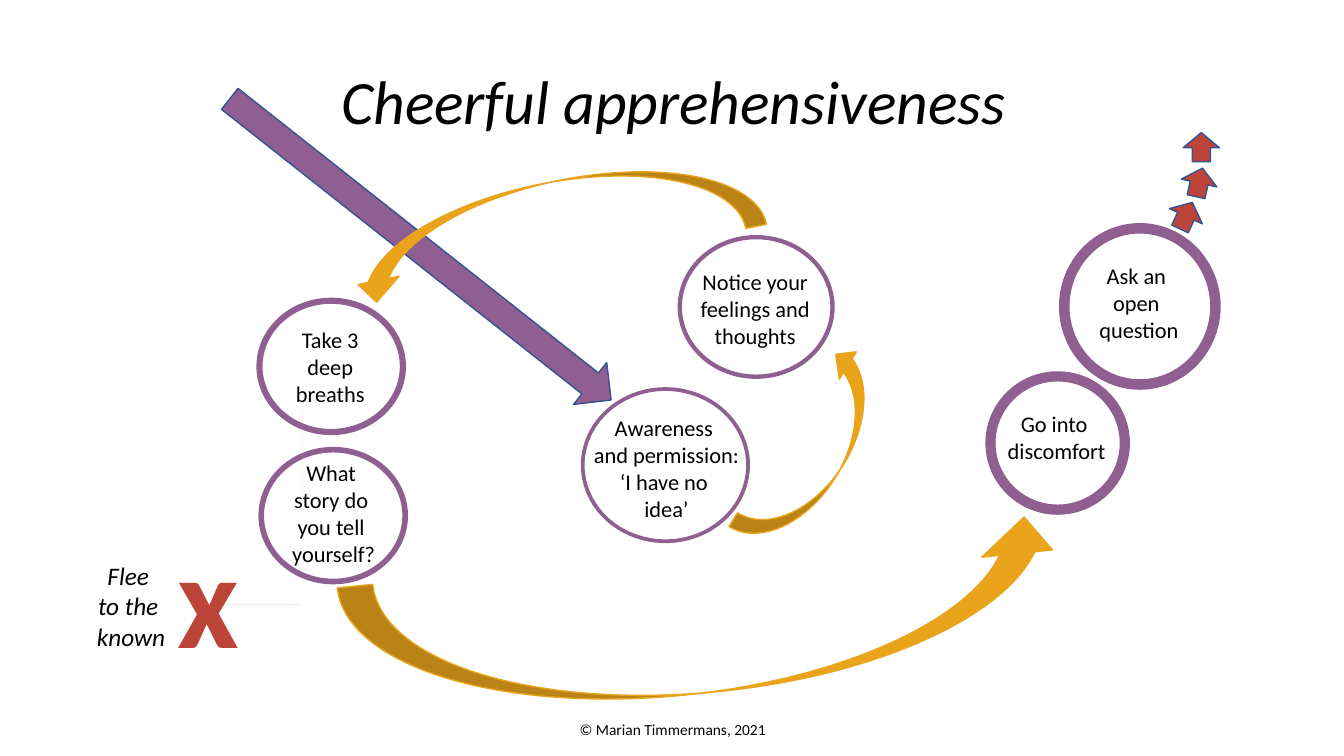
from dataclasses import dataclass

from pptx import Presentation
from pptx.dml.color import RGBColor
from pptx.enum.shapes import MSO_SHAPE as Preset
from pptx.enum.text import MSO_ANCHOR as Anchor, MSO_AUTO_SIZE as AutoSize, PP_ALIGN as Align
from pptx.util import Inches, Pt


@dataclass(frozen=True)
class Theme:
    font: str = "Calibri"
    ink: str = "000000"
    purple: str = "905F92"
    gold: str = "E9A41B"
    red: str = "BC4438"
    outline: str = "325491"
    title: int = 44
    label: int = 16
    aside: int = 18
    cross: int = 96
    credit: int = 11


THEME = Theme()

# centre of attention, ring box, ring thickness, line width, label box, label lines
STEPS = [
    ((5.77, 3.85, 1.66, 1.53), 0.013, 1.25, (5.78, 4.06, 1.66, 1.18),
     ["Awareness ", "and permission: ", "‘I have no \videa’"]),
    ((6.73, 2.34, 1.54, 1.41), 0.018, 1.25, (6.84, 2.61, 1.3, 0.91),
     ["Notice your feelings and thoughts"]),
    ((2.55, 2.96, 1.47, 1.35), 0.035, 1, (2.68, 3.19, 1.19, 0.91),
     ["Take 3 deep breaths"]),
    ((2.57, 4.44, 1.47, 1.35), 0.031, 1, (2.61, 4.51, 1.4, 1.18),
     ["What ", "story do ", "you tell ", "yourself?"]),
    ((9.78, 3.69, 1.42, 1.41), 0.062, 1, (9.8, 4.02, 1.36, 0.64),
     ["Go into ", "discomfort"]),
    ((10.51, 2.22, 1.59, 1.64), 0.057, 1, (10.62, 2.55, 1.35, 0.91),
     ["Ask an ", "open ", "question"]),
]
SWEEPS = [
    ((6.99, 4.15, 2.17, 0.64), 301.8),
    ((3.41, 1.81, 4.15, 0.83), 168.7),
    ((3.4, 5.46, 7.2, 1.41), 354.1),
]
SPARKS = [
    ((11.62, 1.96, 0.29, 0.36), 294.9),
    ((11.75, 1.63, 0.29, 0.36), 282.5),
    ((11.77, 1.28, 0.29, 0.36), 270),
]
# Each stroke is two cubic curves that face each other
GOLD_STROKES = [
    [[(2.65, 4.49), (2.66, 4.4), (2.61, 4.37), (2.68, 4.21)],
     [(2.76, 4.22), (2.68, 4.38), (2.73, 4.41), (2.72, 4.5)]],
    [[(2.76, 4.5), (2.77, 4.41), (2.73, 4.37), (2.8, 4.23)],
     [(2.87, 4.24), (2.81, 4.39), (2.85, 4.42), (2.83, 4.51)]],
]
RED_STROKES = [
    [[(2.84, 5.75), (2.76, 5.84), (2.8, 5.89), (2.62, 6)],
     [(2.55, 5.95), (2.74, 5.84), (2.7, 5.78), (2.77, 5.7)]],
    [[(2.74, 5.67), (2.67, 5.75), (2.68, 5.81), (2.52, 5.92)],
     [(2.46, 5.86), (2.61, 5.75), (2.6, 5.69), (2.67, 5.61)]],
]


def inches(box):
    return [Inches(length) for length in box]


def curve_points(curve, steps=12):
    """Sample a cubic Bezier curve, both ends included."""
    points = []
    for step in range(steps + 1):
        t = step / steps
        weights = ((1 - t) ** 3, 3 * t * (1 - t) ** 2, 3 * t * t * (1 - t), t ** 3)
        points.append(tuple(sum(w * p[axis] for w, p in zip(weights, curve))
                            for axis in (0, 1)))
    return points


def write(frame, lines, size, color=THEME.ink, bold=False, italic=False,
          align=Align.CENTER, spacing=None):
    """Fill a text frame with one paragraph for each line."""
    frame.text = "\n".join(lines)
    for para in frame.paragraphs:
        para.alignment = align
        para.line_spacing = spacing
        for span in para.runs:
            font = span.font
            font.name, font.size = THEME.font, Pt(size)
            font.bold, font.italic = bold, italic
            font.color.rgb = RGBColor.from_string(color)


class Page:
    def __init__(self, deck, theme):
        self.theme = theme
        self.slide = deck.slides.add_slide(deck.slide_layouts[5])
        self.shapes = self.slide.shapes

    def paint(self, shape, fill, line=None, width=1):
        shape.shadow.inherit = False
        shape.fill.solid()
        shape.fill.fore_color.rgb = RGBColor.from_string(fill)
        if line is None:
            shape.line.fill.background()
        else:
            shape.line.color.rgb = RGBColor.from_string(line)
            shape.line.width = Pt(width)

    def title(self, text, box):
        title = self.shapes.title
        title.left, title.top, title.width, title.height = inches(box)
        title.text_frame.auto_size = AutoSize.NONE
        title.text_frame.vertical_anchor = Anchor.MIDDLE
        write(title.text_frame, [text], self.theme.title, italic=True, spacing=0.9)

    def preset(self, kind, box, fill, line, width=1, turn=0, adjust=(), parent=None):
        shape = (parent or self.shapes).add_shape(kind, *inches(box))
        shape.rotation = turn
        for index, value in enumerate(adjust):
            shape.adjustments[index] = value
        self.paint(shape, fill, line, width)

    def text(self, box, lines, size, parent=None, wrap=True, **style):
        frame = (parent or self.shapes).add_textbox(*inches(box)).text_frame
        frame.word_wrap = wrap
        frame.auto_size = AutoSize.SHAPE_TO_FIT_TEXT
        write(frame, lines, size, **style)

    def step(self, ring, thickness, width, label, lines):
        """Group a ring with the label inside it."""
        parent = self.shapes.add_group_shape().shapes
        purple = self.theme.purple
        self.preset(Preset.DONUT, ring, purple, purple, width,
                    adjust=[thickness], parent=parent)
        self.text(label, lines, self.theme.label, parent=parent)

    def strokes(self, strokes, fill):
        """Draw several curved strokes as one outline."""
        outlines = [curve_points(a) + curve_points(b) for a, b in strokes]
        builder = self.shapes.build_freeform(*outlines[0][0], scale=Inches(1))
        for index, points in enumerate(outlines):
            if index:
                builder.move_to(*points[0])
            builder.add_line_segments(points[1:], close=True)
        self.paint(builder.convert_to_shape(), fill)


def main():
    deck = Presentation()
    deck.slide_width, deck.slide_height = Inches(13.33), Inches(7.5)
    page = Page(deck, THEME)

    page.title("Cheerful apprehensiveness", (0.04, 0.31, 13.29, 1.45))
    page.preset(Preset.RIGHT_ARROW, (1.76, 2.21, 4.82, 0.53), THEME.purple,
                THEME.outline, turn=38.3)
    for step in STEPS:
        page.step(*step)
    for box, turn in SWEEPS:
        page.preset(Preset.CURVED_UP_ARROW, box, THEME.gold, THEME.gold, turn=turn)
    page.strokes(GOLD_STROKES, THEME.gold)
    page.strokes(RED_STROKES, THEME.red)
    for box, turn in SPARKS:
        page.preset(Preset.RIGHT_ARROW, box, THEME.red, THEME.outline,
                    turn=turn, adjust=(0.5, 0.52))

    page.text((0.86, 5.51, 0.88, 1.01), ["Flee ", "to the ", "known"],
              THEME.aside, wrap=False, italic=True)
    page.text((1.66, 5.05, 0.89, 1.72), ["x"], THEME.cross, color=THEME.red,
              bold=True, align=Align.LEFT)
    page.text((0.18, 7.09, 13.02, 0.29), ["© Marian Timmermans, 2021 "], THEME.credit)

    deck.save("out.pptx")


if __name__ == "__main__":
    main()
